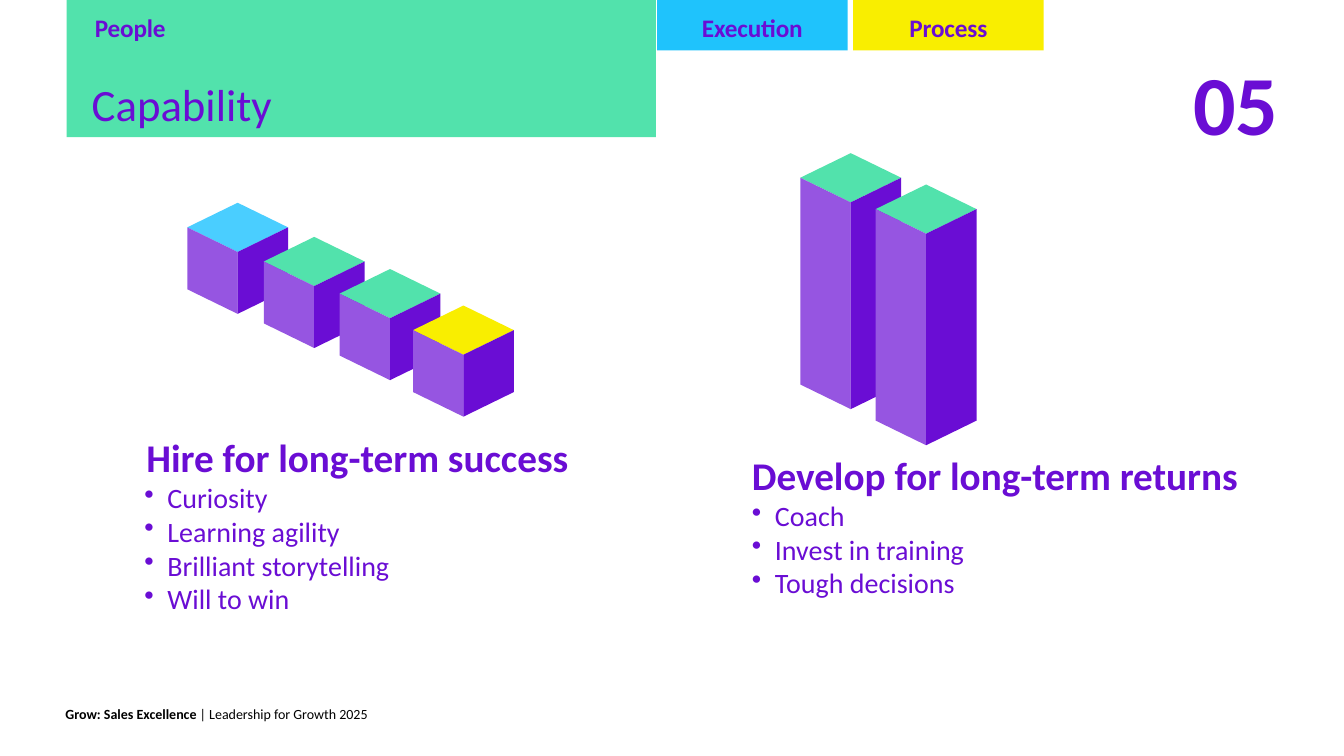
from dataclasses import dataclass

from lxml.etree import SubElement
from pptx import Presentation
from pptx.dml.color import RGBColor
from pptx.enum.shapes import MSO_SHAPE
from pptx.enum.text import MSO_ANCHOR, MSO_AUTO_SIZE, PP_ALIGN
from pptx.oxml.ns import qn
from pptx.util import Cm, Pt


@dataclass(frozen=True)
class Theme:
    font: str = "Calibri"
    ink: str = "6A0DD4"
    side: str = "9655E1"
    green: str = "52E2AC"
    blue: str = "1FC3FC"
    sky: str = "4ACEFF"
    yellow: str = "F9EE00"
    black: str = "000000"
    number: int = 60
    title: int = 32
    head: int = 28
    body: int = 20
    tab: int = 18
    foot: int = 10


def apply(target, **values):
    for name, value in values.items():
        setattr(target, name, value)


class Deck:
    def __init__(self, theme):
        self.theme = theme
        self.file = Presentation()
        apply(self.file, slide_width=Cm(33.87), slide_height=Cm(19.05))
        self.slide = self.file.slides.add_slide(self.file.slide_layouts[5])
        self.shapes = self.slide.shapes

    def paint(self, shape, color):
        shape.shadow.inherit = False
        shape.fill.solid()
        shape.fill.fore_color.rgb = RGBColor.from_string(color)
        shape.line.fill.background()

    def frame(self, shape, top=0, anchor=MSO_ANCHOR.TOP):
        frame = shape.text_frame
        apply(frame, word_wrap=True, auto_size=MSO_AUTO_SIZE.NONE,
              vertical_anchor=anchor, margin_left=0, margin_right=0,
              margin_top=Cm(top), margin_bottom=0)
        return frame

    def label(self, para, text, size, bold=False, color=None, gap=0,
              align=PP_ALIGN.LEFT):
        para.alignment = align
        run = para.add_run()
        run.text = text
        apply(run.font, name=self.theme.font, size=Pt(size), bold=bold)
        run.font.color.rgb = RGBColor.from_string(color or self.theme.ink)
        if gap:
            run._r.get_or_add_rPr().set("spc", str(gap))

    def indent(self, para, left, first=0):
        props = para._p.get_or_add_pPr()
        props.set("marL", str(Cm(left)))
        props.set("indent", str(Cm(first)))
        return props

    def bullet(self, para, text):
        props = self.indent(para, 0.61, -0.58)
        SubElement(props, qn("a:buChar")).set("char", "•")
        stop = SubElement(SubElement(props, qn("a:tabLst")), qn("a:tab"))
        stop.set("pos", str(Cm(0.61)))
        stop.set("algn", "l")
        self.label(para, text, self.theme.body)

    def box(self, left, top, width, height):
        return self.shapes.add_textbox(Cm(left), Cm(top), Cm(width), Cm(height))

    def title(self, text, left, top, width, height):
        shape = self.shapes.title
        apply(shape, left=Cm(left), top=Cm(top), width=Cm(width),
              height=Cm(height))
        self.label(self.frame(shape).paragraphs[0], text, self.theme.title)
        self.shapes._spTree.append(shape._element)

    def tab(self, text, left, width, height, color, inset=None):
        shape = self.shapes.add_shape(MSO_SHAPE.RECTANGLE, Cm(left), 0,
                                      Cm(width), Cm(height))
        self.paint(shape, color)
        para = self.frame(shape, 0.3).paragraphs[0]
        if inset:
            self.indent(para, inset)
        align = PP_ALIGN.LEFT if inset else PP_ALIGN.CENTER
        self.label(para, text, self.theme.tab, True, gap=-10, align=align)

    def points(self, head, items, left, top, width, height, inset):
        frame = self.frame(self.box(left, top, width, height), 0.13)
        self.indent(frame.paragraphs[0], inset)
        self.label(frame.paragraphs[0], head, self.theme.head, True)
        for item in items:
            self.bullet(frame.add_paragraph(), item)

    def number(self, text, left, top, width, height):
        para = self.frame(self.box(left, top, width, height)).paragraphs[0]
        self.indent(para, 0.03)
        self.label(para, text, self.theme.number, True, gap=-60)

    def footer(self, name, rest, left, top, width, height):
        box = self.box(left, top, width, height)
        para = self.frame(box, anchor=MSO_ANCHOR.MIDDLE).paragraphs[0]
        for text, bold in ((name, True), (rest, False)):
            self.label(para, text, self.theme.foot, bold, self.theme.black)

    def blocks(self, items):
        group = self.shapes.add_group_shape()
        half, drop = 1.27, 0.62
        for x, y, tall, color in items:
            mid, low = y + drop, y + 2 * drop
            west, east = x - half, x + half
            faces = (
                (color, [(x, y), (west, mid), (x, low), (east, mid)]),
                (self.theme.side, [(west, mid), (west, mid + tall),
                                   (x, low + tall), (x, low)]),
                (self.theme.ink, [(east, mid), (x, low),
                                  (x, low + tall), (east, mid + tall)]),
            )
            for fill, dots in faces:
                dots = [(Cm(a), Cm(b)) for a, b in dots]
                pen = group.shapes.build_freeform(*dots[0])
                pen.add_line_segments(dots[1:], close=True)
                self.paint(pen.convert_to_shape(), fill)


def main():
    look = Theme()
    deck = Deck(look)
    deck.points("Hire for long-term success",
                ["Curiosity", "Learning agility", "Brilliant storytelling",
                 "Will to win"], 3.61, 10.8, 10.85, 6.78, 0.08)
    deck.points("Develop for long-term returns",
                ["Coach", "Invest in training", "Tough decisions"],
                18.92, 11.25, 12.62, 5.94, 0.03)
    deck.blocks([(5.99, 5.11, 1.56, look.sky), (7.92, 5.97, 1.56, look.green),
                 (9.83, 6.78, 1.56, look.green),
                 (11.68, 7.7, 1.56, look.yellow)])
    deck.blocks([(21.44, 3.86, 5.21, look.green),
                 (23.34, 4.65, 5.33, look.green)])
    deck.number("05", 30.05, 1.3, 3, 2.59)
    deck.tab("People", 1.68, 14.85, 3.46, look.green, 0.71)
    deck.tab("Execution", 16.56, 4.8, 1.27, look.blue)
    deck.tab("Process", 21.5, 4.8, 1.27, look.yellow)
    deck.title("Capability", 2.31, 1.93, 13.5, 1.4)
    deck.footer("Grow: Sales Excellence ", "| Leadership for Growth 2025",
                1.65, 17.78, 10.85, 0.43)
    deck.file.save("out.pptx")


if __name__ == "__main__":
    main()
